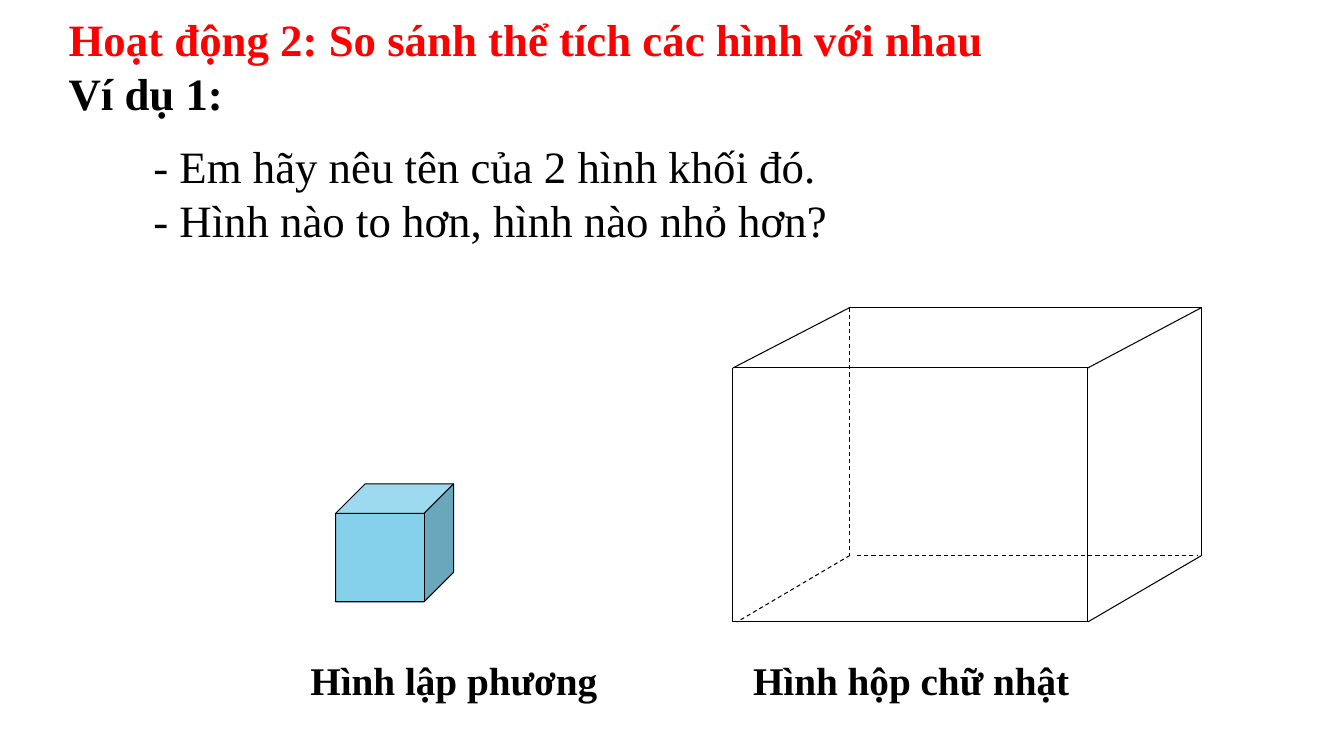
from typing import NamedTuple

from lxml.etree import SubElement
from pptx import Presentation
from pptx.dml.color import RGBColor
from pptx.enum.dml import MSO_LINE
from pptx.enum.shapes import MSO_CONNECTOR, MSO_SHAPE
from pptx.enum.text import MSO_ANCHOR, MSO_AUTO_SIZE, PP_ALIGN
from pptx.oxml.ns import qn
from pptx.shapes.group import GroupShape
from pptx.slide import Slide
from pptx.text.text import TextFrame
from pptx.util import Emu, Pt

EMU_PER_PX = 9144  # 100 px to the inch
FONT = "Times New Roman"
COLORS = {"heading": "FF0000", "text": "000000", "line": "000000", "cube": "85D0EB"}


class Point(NamedTuple):
    x: int
    y: int


class Edge(NamedTuple):
    start: Point
    end: Point
    hidden: bool = False


class Caption(NamedTuple):
    text: str
    left: int
    width: int


HEADING = ["Hoạt động 2: So sánh thể tích các hình với nhau", "Ví dụ 1:"]
QUESTIONS = ["- Em hãy nêu tên của 2 hình khối đó.", "- Hình nào to hơn, hình nào nhỏ hơn?"]
CAPTIONS = [Caption("Hình lập phương", 298, 308), Caption("Hình hộp chữ nhật", 737, 338)]

# Corners run clockwise from the top left.
FRONT = [Point(727, 365), Point(1079, 365), Point(1079, 617), Point(727, 617)]
BACK = [Point(843, 305), Point(1192, 305), Point(1192, 551), Point(843, 551)]
EDGES = [
    Edge(BACK[0], BACK[3], hidden=True),
    Edge(Point(850, 551), Point(1187, 551), hidden=True),
    Edge(BACK[3], Point(731, 617), hidden=True),
    Edge(BACK[0], BACK[1]),
    Edge(BACK[1], BACK[2]),
    *(Edge(FRONT[i], FRONT[(i + 1) % 4]) for i in range(4)),
    *(Edge(FRONT[i], BACK[i]) for i in range(3)),
]


def px(length: int) -> Emu:
    return Emu(length * EMU_PER_PX)


def color(name: str) -> RGBColor:
    return RGBColor.from_string(COLORS[name])


def place(shape, left: int, top: int, width: int, height: int) -> None:
    shape.left, shape.top = px(left), px(top)
    shape.width, shape.height = px(width), px(height)


def write(frame: TextFrame, lines: list[str], size: int, bold: bool, wrap: bool = True) -> None:
    frame.text = "\n".join(lines)
    frame.auto_size = MSO_AUTO_SIZE.NONE
    frame.word_wrap = wrap
    frame.vertical_anchor = MSO_ANCHOR.TOP
    for para in frame.paragraphs:
        para.alignment = PP_ALIGN.LEFT
        para.space_before = Pt(0)
        for span in para.runs:
            span.font.name = FONT
            span.font.size = Pt(size)
            span.font.bold = bold
            span.font.color.rgb = color("text")


def remove_bullets(frame: TextFrame) -> None:
    for para in frame.paragraphs:
        properties = para._p.get_or_add_pPr()
        properties.set("marL", "0")
        properties.set("indent", "0")
        SubElement(properties, qn("a:buNone"))


def draw_edge(group: GroupShape, edge: Edge) -> None:
    line = group.shapes.add_connector(
        MSO_CONNECTOR.STRAIGHT, px(edge.start.x), px(edge.start.y), px(edge.end.x), px(edge.end.y)
    )
    line.line.color.rgb = color("line")
    line.line.width = Pt(0.75)
    if edge.hidden:
        line.line.dash_style = MSO_LINE.DASH
    SubElement(line._element.spPr, qn("a:effectLst"))


def draw_cube(slide: Slide) -> None:
    cube = slide.shapes.add_shape(MSO_SHAPE.CUBE, px(333), px(480), px(117), px(117))
    cube.adjustments[0] = 0.25
    cube.shadow.inherit = False
    cube.fill.solid()
    cube.fill.fore_color.rgb = color("cube")
    cube.line.color.rgb = color("line")
    cube.line.width = Pt(0.75)


def draw_caption(slide: Slide, caption: Caption) -> None:
    box = slide.shapes.add_textbox(px(caption.left), px(646), px(caption.width), px(57))
    write(box.text_frame, [caption.text], size=28, bold=True, wrap=False)


def main() -> None:
    deck = Presentation()
    deck.slide_width, deck.slide_height = px(1333), px(750)
    slide = deck.slides.add_slide(deck.slide_layouts[1])

    title, body = slide.placeholders
    place(title, 58, 7, 1055, 118)
    write(title.text_frame, HEADING, size=32, bold=True)
    title.text_frame.paragraphs[0].runs[0].font.color.rgb = color("heading")
    place(body, 142, 133, 695, 172)
    write(body.text_frame, QUESTIONS, size=32, bold=False)
    remove_bullets(body.text_frame)

    cuboid = slide.shapes.add_group_shape()
    for edge in EDGES:
        draw_edge(cuboid, edge)
    draw_cube(slide)
    for caption in CAPTIONS:
        draw_caption(slide, caption)
    deck.save("out.pptx")


if __name__ == "__main__":
    main()
